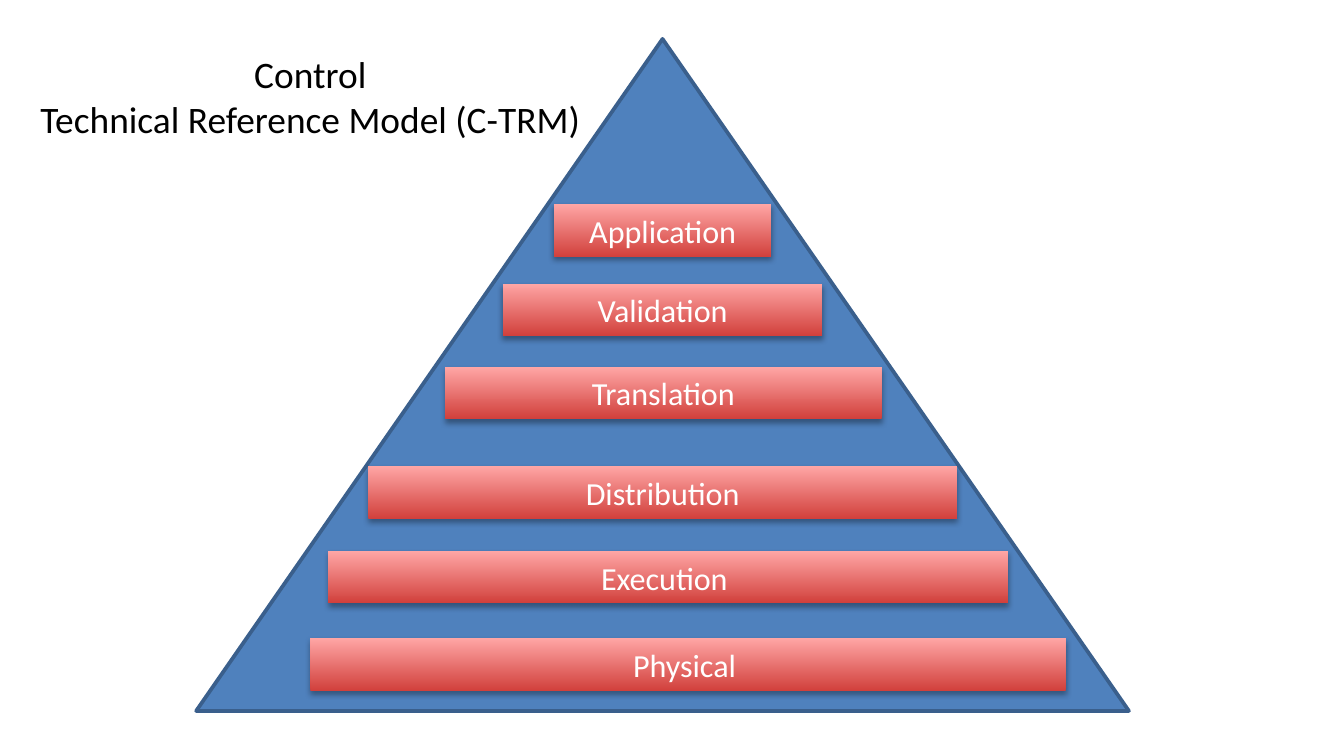
from dataclasses import dataclass

from lxml import etree
from pptx import Presentation
from pptx.dml.color import RGBColor
from pptx.enum.shapes import MSO_SHAPE
from pptx.enum.text import MSO_ANCHOR, MSO_AUTO_SIZE, PP_ALIGN
from pptx.oxml.ns import qn
from pptx.slide import Slide
from pptx.util import Inches, Pt

COLORS = {
    "pyramid": "4F81BD",
    "pyramid_edge": "3A5F8C",
    "layer_bottom": "D1403C",
    "layer_top": "FFA6A5",
    "layer_text": "FFFFFF",
    "title": "000000",
    "shadow": "000000",
}
FONT = "Calibri"
LAYER_HEIGHT = 0.39


@dataclass
class Layer:
    name: str
    left: float
    top: float
    width: float


LAYERS = [
    Layer("Physical ", 2.31, 4.75, 5.62),
    Layer("Execution ", 2.44, 4.1, 5.06),
    Layer("Distribution", 2.74, 3.47, 4.38),
    Layer("Translation", 3.31, 2.73, 3.25),
    Layer("Validation", 3.74, 2.11, 2.38),
    Layer("Application", 4.12, 1.52, 1.62),
]


def rgb(name: str) -> RGBColor:
    return RGBColor.from_string(COLORS[name])


def write_centered(shape, text: str, size: float, color: str) -> None:
    frame = shape.text_frame
    frame.word_wrap = True
    frame.auto_size = MSO_AUTO_SIZE.SHAPE_TO_FIT_TEXT
    paragraph = frame.paragraphs[0]
    paragraph.text = text
    paragraph.alignment = PP_ALIGN.CENTER
    paragraph.font.name = FONT
    paragraph.font.size = Pt(size)
    paragraph.font.color.rgb = rgb(color)


def add_drop_shadow(shape) -> None:
    """Replace the theme shadow with a soft one straight below the shape."""
    shape.shadow.inherit = False
    effects = shape._element.spPr.find(qn("a:effectLst"))
    shadow = etree.SubElement(
        effects, qn("a:outerShdw"), blurRad=str(Pt(3.1)), dist=str(Pt(1.8)),
        dir="5400000", rotWithShape="0")
    color = etree.SubElement(shadow, qn("a:srgbClr"), val=COLORS["shadow"])
    etree.SubElement(color, qn("a:alpha"), val="35000")


def draw_pyramid(slide: Slide) -> None:
    pyramid = slide.shapes.add_shape(
        MSO_SHAPE.ISOSCELES_TRIANGLE,
        Inches(1.46), Inches(0.29), Inches(6.94), Inches(5))
    pyramid.shadow.inherit = False
    pyramid.fill.solid()
    pyramid.fill.fore_color.rgb = rgb("pyramid")
    pyramid.line.color.rgb = rgb("pyramid_edge")
    pyramid.line.width = Pt(2)


def draw_layer(slide: Slide, layer: Layer) -> None:
    bar = slide.shapes.add_shape(
        MSO_SHAPE.RECTANGLE, Inches(layer.left), Inches(layer.top),
        Inches(layer.width), Inches(LAYER_HEIGHT))
    bar.fill.gradient()
    bar.fill.gradient_angle = 90
    for stop, color in zip(bar.fill.gradient_stops, ("layer_bottom", "layer_top")):
        stop.color.rgb = rgb(color)
    bar.line.fill.background()
    add_drop_shadow(bar)
    bar.text_frame.vertical_anchor = MSO_ANCHOR.MIDDLE
    write_centered(bar, layer.name, 17.2, "layer_text")


def draw_title(slide: Slide) -> None:
    title = slide.shapes.add_textbox(
        Inches(-0.19), Inches(0.33), Inches(5), Inches(0.77))
    write_centered(title, "Control\vTechnical Reference Model (C-TRM)", 20, "title")


def main() -> None:
    presentation = Presentation()
    presentation.slide_width = Inches(10)
    presentation.slide_height = Inches(10) * 9 // 16
    slide = presentation.slides.add_slide(presentation.slide_layouts[6])
    draw_pyramid(slide)
    for layer in LAYERS:
        draw_layer(slide, layer)
    draw_title(slide)
    presentation.save("out.pptx")


if __name__ == "__main__":
    main()
